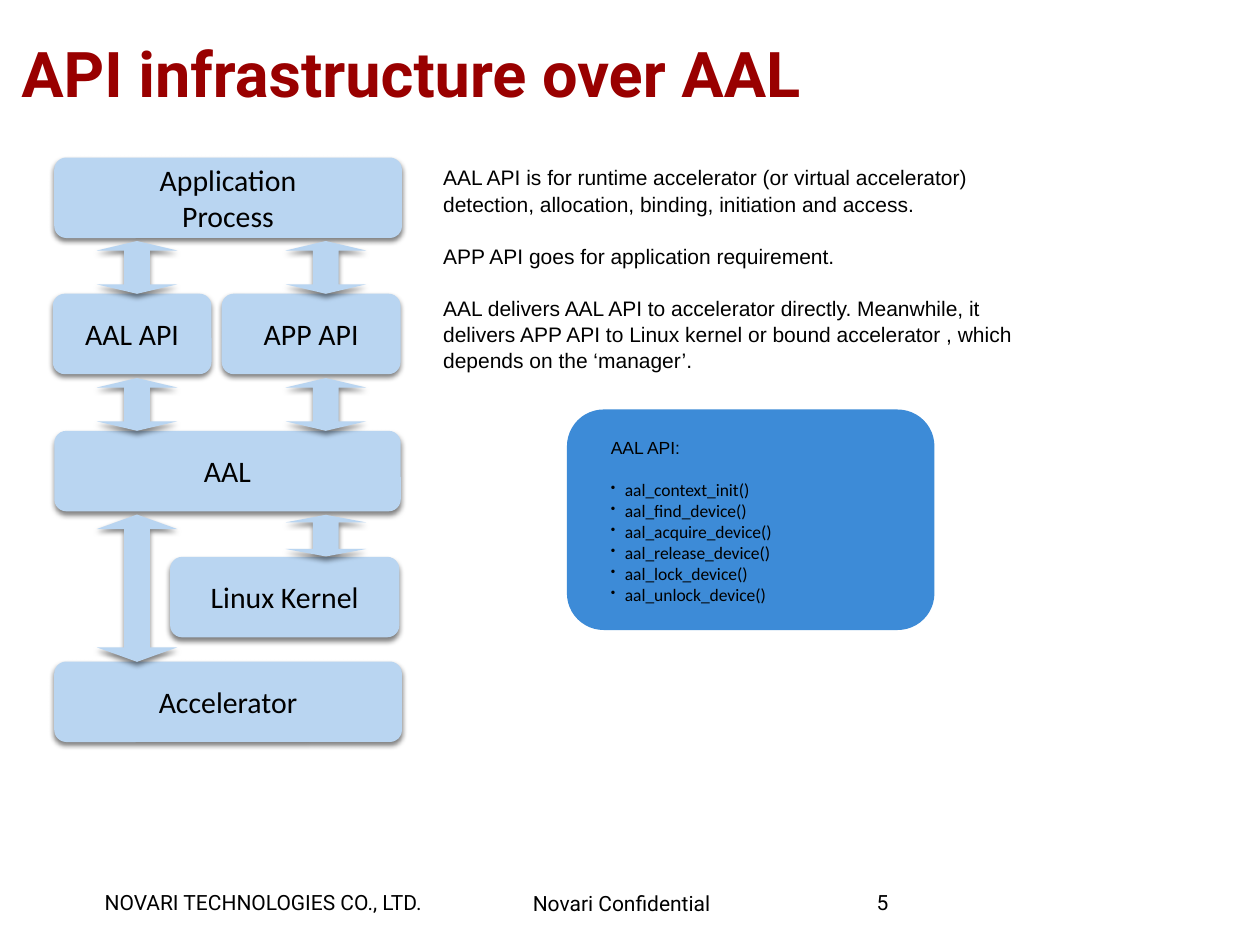
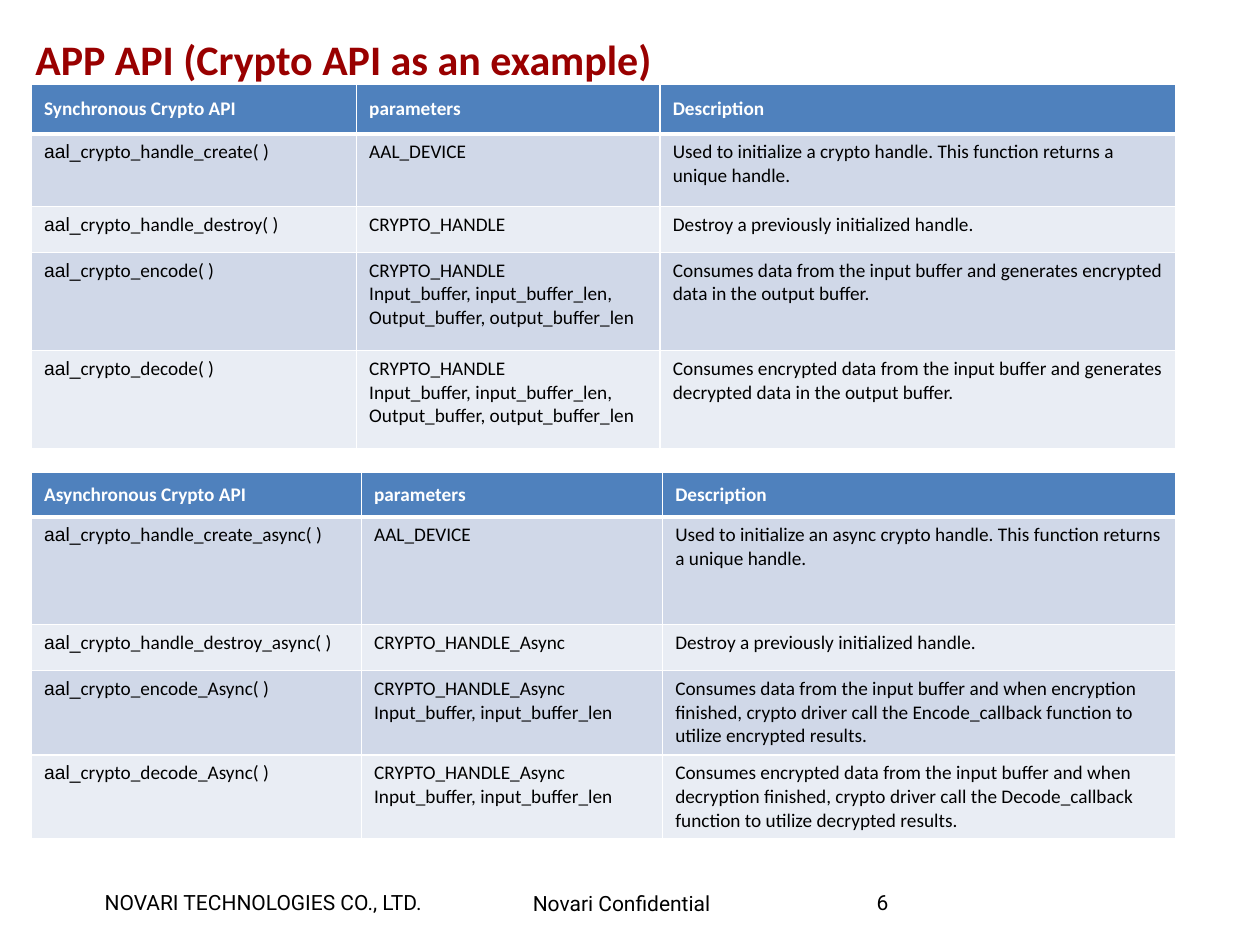
from dataclasses import dataclass
from typing import NamedTuple

import pptx
import pptx.dml.color
import pptx.enum.shapes
import pptx.enum.text
import pptx.oxml
import pptx.oxml.ns
import pptx.util

Pt = pptx.util.Pt
Shapes = pptx.enum.shapes.MSO_SHAPE
Anchor = pptx.enum.text.MSO_ANCHOR
Align = pptx.enum.text.PP_ALIGN

COLORS = {
    "title": "990000",
    "text": "000000",
    "white": "FFFFFF",
    "block": "B9D5F1",
    "panel": "3D8BD7",
    "header": "4F81BD",
    "odd_row": "D0D8E8",
    "even_row": "E9EDF4",
}
NAMESPACE = pptx.oxml.ns.nsdecls("a")


class Area(NamedTuple):
    left: float
    top: float
    width: float
    height: float


class Run(NamedTuple):
    text: str
    font: str


@dataclass
class Line:
    runs: list[Run]
    space_before: float = 0
    bullet: bool = False


@dataclass
class Block:
    label: str
    area: Area


@dataclass
class Arrow:
    center_x: float
    top: float
    length: float


@dataclass
class ApiTable:
    top: float
    columns: list[float]
    heights: list[float]
    rows: list[tuple[str, str, str]]


BLOCK_HEIGHT = 46
BLOCKS = [
    Block("Application\vProcess", Area(31, 90, 198.7, BLOCK_HEIGHT)),
    Block("AAL API", Area(30.2, 167.8, 90.7, BLOCK_HEIGHT)),
    Block("APP API", Area(126.7, 167.8, 102.2, BLOCK_HEIGHT)),
    Block("AAL", Area(31, 246.2, 198, BLOCK_HEIGHT)),
    Block("Linux Kernel", Area(97.2, 318.2, 131, BLOCK_HEIGHT)),
    Block("Accelerator", Area(31, 378, 198.7, BLOCK_HEIGHT)),
]
LEFT_ARROW, RIGHT_ARROW = 78.3, 186.2
ARROW_WIDTH = 46
ARROWS = [
    Arrow(x, top, 30.2) for top in (137.7, 216) for x in (LEFT_ARROW, RIGHT_ARROW)
] + [Arrow(LEFT_ARROW, 294, 84.2), Arrow(RIGHT_ARROW, 294.2, 23.8)]

NOTES = [
    "AAL API is for runtime accelerator (or virtual accelerator) "
    "detection, allocation, binding, initiation and access.",
    "APP API goes for application requirement.",
    "AAL delivers AAL API to accelerator directly. Meanwhile, it delivers APP API "
    "to Linux kernel or bound accelerator , which depends on the ‘manager’.",
]
AAL_CALLS = ["context_init", "find_device", "acquire_device",
             "release_device", "lock_device", "unlock_device"]

BUFFERS = "CRYPTO_HANDLE\nInput_buffer, input_buffer_len,\nOutput_buffer, output_buffer_len"
ASYNC_BUFFERS = "CRYPTO_HANDLE_Async\nInput_buffer, input_buffer_len"
DESTROY = "Destroy a previously initialized handle."
TABLES = [
    ApiTable(48, [185.8, 173.5, 294.5], [28.5, 41.5, 26.2, 56.2, 56.2], [
        ("Synchronous Crypto API", "parameters", "Description"),
        ("crypto_handle_create( )", "AAL_DEVICE",
         "Used to initialize a crypto handle. This function returns a unique handle."),
        ("crypto_handle_destroy( )", "CRYPTO_HANDLE", DESTROY),
        ("crypto_encode( )", BUFFERS,
         "Consumes data from the input buffer and generates encrypted data "
         "in the output buffer."),
        ("crypto_decode( )", BUFFERS,
         "Consumes encrypted data from the input buffer and generates decrypted data "
         "in the output buffer."),
    ]),
    ApiTable(270, [188.6, 172.1, 293.1], [25.5, 61.5, 26.2, 48.2, 48.2], [
        ("Asynchronous Crypto API", "parameters", "Description"),
        ("crypto_handle_create_async( )", "AAL_DEVICE",
         "Used to initialize an async crypto handle. This function returns a unique handle."),
        ("crypto_handle_destroy_async( )", "CRYPTO_HANDLE_Async", DESTROY),
        ("crypto_encode_Async( )", ASYNC_BUFFERS,
         "Consumes data from the input buffer and when encryption finished, crypto driver "
         "call the Encode_callback function to utilize encrypted results."),
        ("crypto_decode_Async( )", ASYNC_BUFFERS,
         "Consumes encrypted data from the input buffer and when decryption finished, crypto "
         "driver call the Decode_callback function to utilize decrypted results."),
    ]),
]


def rgb(name: str) -> pptx.dml.color.RGBColor:
    return pptx.dml.color.RGBColor.from_string(COLORS[name])


def place(area: Area) -> list[int]:
    return [Pt(length) for length in area]


def plain(text: str, font: str) -> list[Line]:
    return [Line([Run(part, font)]) for part in text.split("\n")]


def add_bullet(paragraph) -> None:
    properties = paragraph._p.get_or_add_pPr()
    properties.set("marL", str(Pt(8)))
    properties.set("indent", str(-Pt(8)))
    for element in ('buSzPct {} val="75000"', 'buChar {} char="•"'):
        properties.append(pptx.oxml.parse_xml(f"<a:{element.format(NAMESPACE)}/>"))


def write_text(frame, lines: list[Line], *, size: float, color: str = "text",
               bold: bool = False, align=Align.LEFT, line_spacing: float | None = None) -> None:
    for index, line in enumerate(lines):
        paragraph = frame.add_paragraph() if index else frame.paragraphs[0]
        if line.bullet:
            add_bullet(paragraph)
        paragraph.alignment = align
        paragraph.line_spacing = line_spacing
        if line.space_before:
            paragraph.space_before = Pt(line.space_before)
        for part in line.runs:
            for piece_index, piece in enumerate(part.text.split("\v")):
                if piece_index:
                    paragraph.add_line_break()
                run = paragraph.add_run()
                run.text = piece
                run.font.name = part.font
                run.font.size = Pt(size)
                run.font.bold = bold
                run.font.color.rgb = rgb(color)


def set_margins(frame, margins: tuple[float, float, float, float]) -> None:
    (frame.margin_left, frame.margin_top,
     frame.margin_right, frame.margin_bottom) = map(Pt, margins)


def add_text(slide, area: Area, lines: list[Line], *, anchor=Anchor.TOP,
             margins: tuple[float, float, float, float] = (7.2, 3.6, 7.2, 3.6),
             **text_format) -> None:
    frame = slide.shapes.add_textbox(*place(area)).text_frame
    frame.word_wrap = True
    frame.vertical_anchor = anchor
    set_margins(frame, margins)
    write_text(frame, lines, **text_format)


def add_filled(slide, kind, area: Area, color: str):
    shape = slide.shapes.add_shape(kind, *place(area))
    shape.shadow.inherit = False
    shape.fill.solid()
    shape.fill.fore_color.rgb = rgb(color)
    shape.line.fill.background()
    return shape


def add_shadow(shape) -> None:
    shadow = pptx.oxml.parse_xml(
        f'<a:outerShdw {NAMESPACE} blurRad="{Pt(3)}" dist="{Pt(2)}" dir="5400000" '
        f'rotWithShape="0"><a:srgbClr val="{COLORS["text"]}"><a:alpha val="50000"/>'
        "</a:srgbClr></a:outerShdw>")
    shape._element.spPr.find(pptx.oxml.ns.qn("a:effectLst")).append(shadow)


def add_block(slide, block: Block) -> None:
    shape = add_filled(slide, Shapes.ROUNDED_RECTANGLE, block.area, "block")
    shape.adjustments[0] = 0.15
    add_shadow(shape)
    frame = shape.text_frame
    frame.word_wrap = True
    frame.vertical_anchor = Anchor.MIDDLE
    set_margins(frame, (3, 3, 3, 3))
    write_text(frame, plain(block.label, "Calibri"), size=17, align=Align.CENTER)


def add_arrow(slide, arrow: Arrow) -> None:
    area = Area(arrow.center_x - arrow.length / 2,
                arrow.top + (arrow.length - ARROW_WIDTH) / 2,
                arrow.length, ARROW_WIDTH)
    shape = add_filled(slide, Shapes.LEFT_RIGHT_ARROW, area, "block")
    shape.rotation = 270
    shape.adjustments[0] = 0.32
    shape.adjustments[1] = 0.18
    add_shadow(shape)


def set_borders(cell, row: int) -> None:
    widths = {"L": 1, "R": 1, "T": 3 if row == 1 else 1, "B": 3 if row == 0 else 1}
    properties = cell._tc.get_or_add_tcPr()
    for side, width in widths.items():
        properties.append(pptx.oxml.parse_xml(
            f'<a:ln{side} {NAMESPACE} w="{Pt(width)}"><a:solidFill>'
            f'<a:srgbClr val="{COLORS["white"]}"/></a:solidFill></a:ln{side}>'))


def add_api_table(slide, api: ApiTable) -> None:
    area = Area(18, api.top, sum(api.columns), sum(api.heights))
    table = slide.shapes.add_table(len(api.rows), len(api.columns), *place(area)).table
    for column, width in zip(table.columns, api.columns):
        column.width = Pt(width)
    for row_index, (texts, height) in enumerate(zip(api.rows, api.heights)):
        table.rows[row_index].height = Pt(height)
        header = row_index == 0
        fill = "header" if header else "odd_row" if row_index % 2 else "even_row"
        for column_index, text in enumerate(texts):
            cell = table.cell(row_index, column_index)
            set_borders(cell, row_index)
            cell.fill.solid()
            cell.fill.fore_color.rgb = rgb(fill)
            cell.vertical_anchor = Anchor.MIDDLE if header else Anchor.TOP
            lines = plain(text, "Calibri")
            if column_index == 0 and not header:
                lines[0].runs.insert(0, Run("aal_", "Arial"))
            write_text(cell.text_frame, lines, size=11, bold=header,
                       color="white" if header else "text")


def add_slide(presentation, number: int, title: str, area: Area, font: str, size: float):
    slide = presentation.slides.add_slide(presentation.slide_layouts[6])
    add_text(slide, Area(59.8, 508.3, 200, 14.4),
             plain("NOVARI TECHNOLOGIES CO., LTD.", "Roboto"), size=12, margins=(0, 0, 6.5, 0))
    add_text(slide, Area(298, 509, 147, 14.4),
             plain("Novari Confidential", "Roboto"), size=12, margins=(6.5, 0, 6.5, 0))
    add_text(slide, Area(501, 510.5, 165, 29.5), plain(str(number), "Roboto"),
             size=12, margins=(0, 0, 0, 0), line_spacing=0.85)
    add_text(slide, area, plain(title, font), size=size, color="title", bold=True,
             anchor=Anchor.BOTTOM, margins=(0, 3, 6.5, 3))
    return slide


def build_infrastructure(presentation) -> None:
    slide = add_slide(presentation, 5, "API infrastructure over AAL",
                      Area(12.2, 0, 580, 66.2), "Roboto", 36)
    for block in BLOCKS:
        add_block(slide, block)
    for arrow in ARROWS:
        add_arrow(slide, arrow)
    notes = [Line([Run(note, "Arial")], 14.5 if index else 0)
             for index, note in enumerate(NOTES)]
    add_text(slide, Area(246.2, 90, 354, 152.6), notes, size=12, line_spacing=1.05)
    add_filled(slide, Shapes.ROUNDED_RECTANGLE, Area(324, 234, 210, 126), "panel")
    calls = [Line([Run(f"aal_{call}()", "Calibri")], 0 if index else 12, True)
             for index, call in enumerate(AAL_CALLS)]
    add_text(slide, Area(342, 246.2, 174, 116.6), plain("AAL API:", "Arial") + calls, size=10)


def build_crypto(presentation) -> None:
    slide = add_slide(presentation, 6, "APP API (Crypto API as an example)",
                      Area(20.2, 0, 610, 51), "Calibri", 24)
    for api in TABLES:
        add_api_table(slide, api)


def main() -> None:
    presentation = pptx.Presentation()
    presentation.slide_width = Pt(720)
    presentation.slide_height = Pt(540)
    build_infrastructure(presentation)
    build_crypto(presentation)
    presentation.save("out.pptx")


if __name__ == "__main__":
    main()
